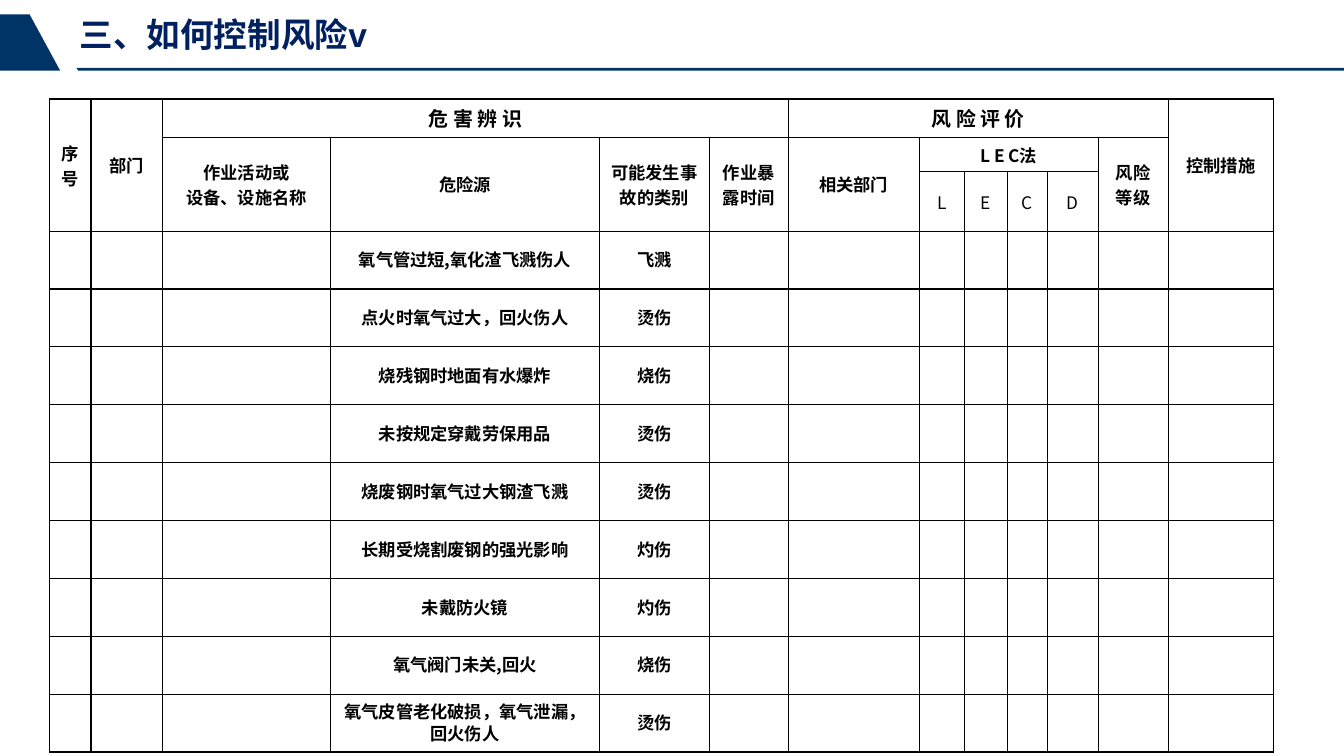
from dataclasses import dataclass

from lxml import etree
from pptx import Presentation
from pptx.dml.color import RGBColor
from pptx.enum.text import MSO_ANCHOR, PP_ALIGN
from pptx.oxml.ns import qn
from pptx.util import Pt

LEFT, CENTER = PP_ALIGN.LEFT, PP_ALIGN.CENTER
TOP, MIDDLE = MSO_ANCHOR.TOP, MSO_ANCHOR.MIDDLE
TITLE_ONLY_LAYOUT = 5


@dataclass(frozen=True)
class Theme:
    band: str = "003366"
    title: str = "002060"
    ink: str = "000000"
    title_font: str = "Arial"
    body_font: str = "Noto Sans CJK SC"
    title_size: float = 25.3
    group_size: float = 15
    body_size: float = 13
    border: float = 1


COLUMN_WIDTHS = [31.25, 53.85, 126.5, 202.6, 82.8, 59.5, 98.7,
                 33.9, 32.4, 30.1, 38.4, 52.7, 79.5]
HEADER_HEIGHTS = [25.7, 25.4, 38.6]
HAZARD_HEIGHT = 43.6
HAZARD_COLUMN = 3

# row, column, rows spanned, columns spanned, text
HEADINGS = [
    (0, 0, 3, 1, "序号"),
    (0, 1, 3, 1, "部门"),
    (0, 12, 3, 1, "控制措施"),
    (1, 2, 2, 1, "作业活动或\n设备、设施名称"),
    (1, 3, 2, 1, "危险源"),
    (1, 4, 2, 1, "可能发生事故的类别"),
    (1, 5, 2, 1, "作业暴露时间"),
    (1, 6, 2, 1, "相关部门"),
    (1, 7, 1, 4, "L E C法"),
    (1, 11, 2, 1, "风险等级"),
]
GROUP_HEADINGS = [
    (0, 2, 1, 4, "危 害 辨 识"),
    (0, 6, 1, 6, "风 险 评 价"),
]
LEC_FACTORS = "LECD"
LEC_COLUMN = 7

HAZARDS = [
    ("氧气管过短,氧化渣飞溅伤人", "飞溅"),
    ("点火时氧气过大，回火伤人", "烫伤"),
    ("烧残钢时地面有水爆炸", "烧伤"),
    ("未按规定穿戴劳保用品", "烫伤"),
    ("烧废钢时氧气过大钢渣飞溅", "烫伤"),
    ("长期受烧割废钢的强光影响", "灼伤"),
    ("未戴防火镜", "灼伤"),
    ("氧气阀门未关,回火", "烧伤"),
    ("氧气皮管老化破损，氧气泄漏，回火伤人", "烫伤"),
]


class SlideBuilder:
    def __init__(self, slide, theme):
        self.slide = slide
        self.theme = theme

    def format_text(self, frame, size, color, font, bold=True, align=CENTER, spacing=1.0):
        for paragraph in frame.paragraphs:
            paragraph.alignment = align
            paragraph.line_spacing = spacing
            paragraph.space_before = Pt(0)
            for run in paragraph.runs:
                run.font.size = Pt(size)
                run.font.bold = bold
                run.font.name = font
                run.font.color.rgb = RGBColor.from_string(color)
                east_asian = etree.Element(qn("a:ea"), typeface=self.theme.body_font)
                run.font._element.find(qn("a:latin")).addnext(east_asian)

    def title(self, text, left, top, width, height):
        title = self.slide.shapes.title
        title.left, title.top = Pt(left), Pt(top)
        title.width, title.height = Pt(width), Pt(height)
        frame = title.text_frame
        frame.text = text
        frame.word_wrap = True
        frame.vertical_anchor = TOP
        frame.margin_left = frame.margin_right = Pt(0)
        frame.margin_top = frame.margin_bottom = Pt(0)
        self.format_text(frame, self.theme.title_size, self.theme.title,
                         self.theme.title_font, align=LEFT)

    def outline(self, points):
        """Draw a closed, filled polygon through the points."""
        start, *others = [(Pt(x), Pt(y)) for x, y in points]
        builder = self.slide.shapes.build_freeform(*start, scale=1.0)
        builder.add_line_segments(others, close=True)
        shape = builder.convert_to_shape()
        shape.shadow.inherit = False
        shape.fill.solid()
        shape.fill.fore_color.rgb = RGBColor.from_string(self.theme.band)
        shape.line.fill.background()

    def table(self, left, top, widths, heights):
        table = self.slide.shapes.add_table(
            len(heights), len(widths), Pt(left), Pt(top),
            Pt(sum(widths)), Pt(sum(heights))).table
        table.first_row = table.horz_banding = False
        for column, width in zip(table.columns, widths):
            column.width = Pt(width)
        for row, height in zip(table.rows, heights):
            row.height = Pt(height)
        for cell in table.iter_cells():
            cell.fill.background()
            cell.vertical_anchor = MIDDLE
            self.border(cell)
        return table

    def border(self, cell):
        properties = cell._tc.get_or_add_tcPr()
        for position, side in enumerate(("lnL", "lnR", "lnT", "lnB")):
            line = etree.Element(qn(f"a:{side}"), w=str(Pt(self.theme.border)))
            fill = etree.SubElement(line, qn("a:solidFill"))
            etree.SubElement(fill, qn("a:srgbClr"), val=self.theme.ink)
            properties.insert(position, line)

    def cell(self, cell, text, size=None, bold=True, spacing=1.0):
        cell.text_frame.text = text
        cell.margin_left = cell.margin_right = Pt(7.9)
        self.format_text(cell.text_frame, size or self.theme.body_size, self.theme.ink,
                         self.theme.body_font, bold, spacing=spacing)

    def headings(self, table, headings, size):
        for row, column, row_span, column_span, text in headings:
            heading = table.cell(row, column)
            heading.merge(table.cell(row + row_span - 1, column + column_span - 1))
            self.cell(heading, text, size)


def main():
    theme = Theme()
    presentation = Presentation()
    presentation.slide_width, presentation.slide_height = Pt(1012.32), Pt(569.52)
    layout = presentation.slide_layouts[TITLE_ONLY_LAYOUT]
    builder = SlideBuilder(presentation.slides.add_slide(layout), theme)

    builder.outline([(57.6, 51.1), (1012.32, 51.1), (1012.32, 53.3), (59, 53.3)])
    builder.outline([(22.3, 10.8), (45.4, 53.3), (0, 53.3), (0, 10.8)])
    builder.title("三、如何控制风险v", 59.8, 10.8, 327, 31)

    heights = HEADER_HEIGHTS + [HAZARD_HEIGHT] * len(HAZARDS)
    risks = builder.table(37.3, 74.6, COLUMN_WIDTHS, heights)
    builder.headings(risks, HEADINGS, theme.body_size)
    builder.headings(risks, GROUP_HEADINGS, theme.group_size)
    for column, factor in enumerate(LEC_FACTORS, LEC_COLUMN):
        builder.cell(risks.cell(2, column), factor, bold=False)
    for row, hazard in enumerate(HAZARDS, len(HEADER_HEIGHTS)):
        for column, text in enumerate(hazard, HAZARD_COLUMN):
            builder.cell(risks.cell(row, column), text, spacing=0.9)

    presentation.save("out.pptx")


if __name__ == "__main__":
    main()
